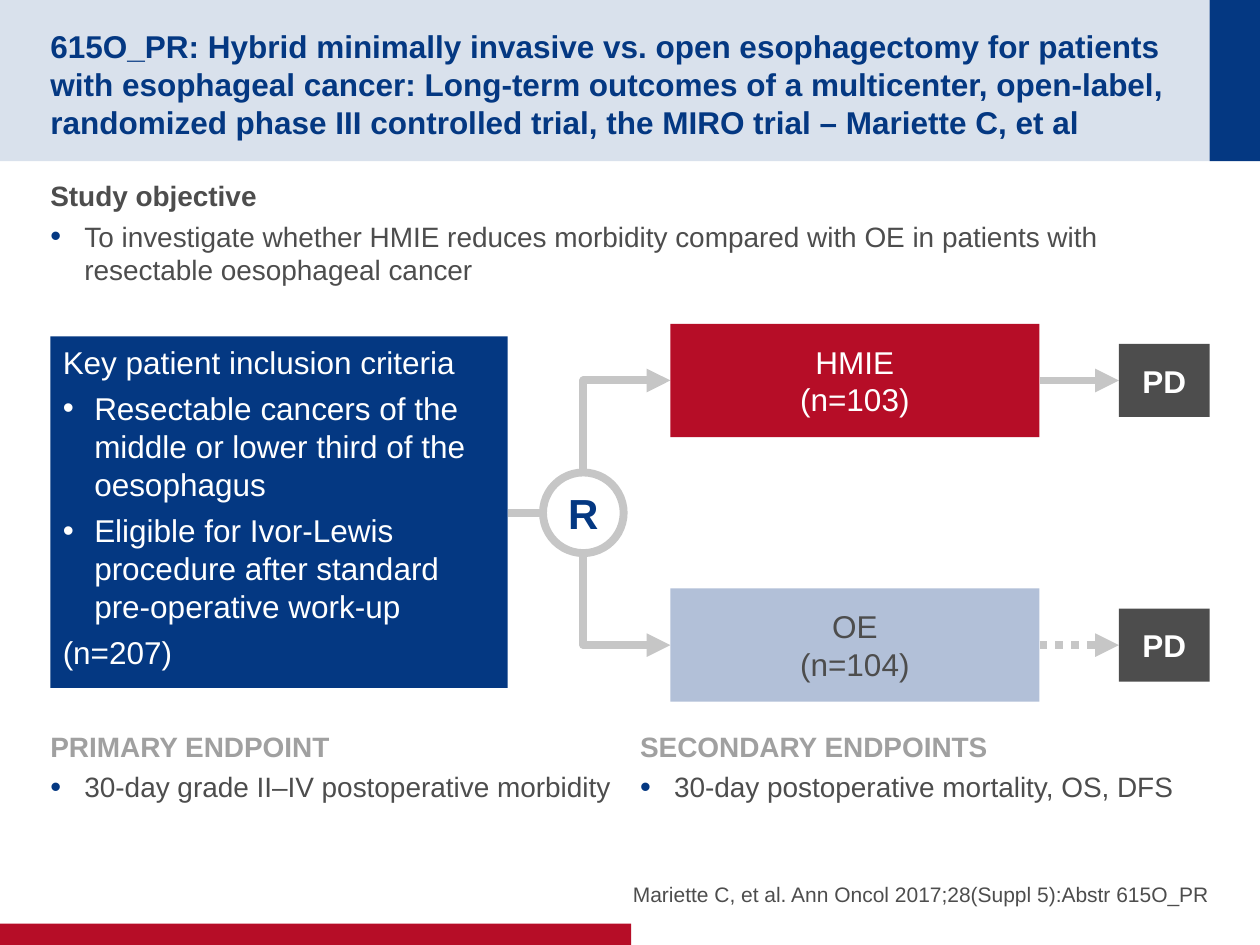
import pptx
import pptx.util
import pptx.dml.color
from lxml import etree
from pptx.enum.dml import MSO_LINE
from pptx.enum.shapes import MSO_CONNECTOR, MSO_SHAPE
from pptx.enum.text import MSO_ANCHOR, MSO_AUTO_SIZE, PP_ALIGN
from pptx.oxml.ns import qn

Inches, Pt = pptx.util.Inches, pptx.util.Pt

# Content
NAVY, RED, PALE, BAND = "043882", "B60D27", "B2C0D8", "D9E1EC"
DARK, GREY, LINE, WHITE = "4D4D4D", "A0A0A0", "C6C6C6", "FFFFFF"
TITLE = ("615O_PR: Hybrid minimally invasive vs. open esophagectomy for patients "
         "with esophageal cancer: Long-term outcomes of a multicenter, open-label, "
         "randomized phase III controlled trial, the MIRO trial – Mariette C, et al")
CITATION = "Mariette C, et al. Ann Oncol 2017;28(Suppl 5):Abstr 615O_PR"
# heading, heading colour, bullet, box
SECTIONS = [
    ("Study objective", DARK,
     "To investigate whether HMIE reduces morbidity compared with OE in patients "
     "with resectable oesophageal cancer", (0.4, 1.37, 9.2, 1.0)),
    ("PRIMARY ENDPOINT", GREY, "30-day grade II–IV postoperative morbidity",
     (0.4, 5.74, 4.52, 0.87)),
    ("SECONDARY ENDPOINTS", GREY, "30-day postoperative mortality, OS, DFS",
     (5.08, 5.74, 4.52, 0.87)),
]
# text, is bullet
CRITERIA = [
    ("Key patient inclusion criteria", False),
    ("Resectable cancers of the middle or lower third of the oesophagus", True),
    ("Eligible for Ivor-Lewis procedure after standard pre-operative work-up", True),
    ("(n=207)", False),
]
# name, size, fill, text colour, centre height, dash to PD
ARMS = [
    ("HMIE", "(n=103)", RED, WHITE, 3.02, None),
    ("OE", "(n=104)", PALE, DARK, 5.12, MSO_LINE.ROUND_DOT),
]
EDGE, RIGHT = 0.4, 9.6
CRIT_W = 3.63
R_X, R_Y, R_D = 4.63, 4.07, 0.64
ARM_X, ARM_W, ARM_H = 5.32, 2.93, 0.9
PD_W, PD_H = 0.72, 0.58


def rgb(value):
    return pptx.dml.color.RGBColor.from_string(value)


def box(s, kind, at, fill=None):
    sp = s.shapes.add_shape(kind, *map(Inches, at))
    sp.shadow.inherit = False
    sp.line.fill.background()
    if fill:
        sp.fill.solid()
        sp.fill.fore_color.rgb = rgb(fill)
    else:
        sp.fill.background()
    return sp


def frame(sp, margins, anchor=MSO_ANCHOR.TOP, wrap=True):
    tf = sp.text_frame
    tf.auto_size = MSO_AUTO_SIZE.NONE
    tf.word_wrap = wrap
    tf.vertical_anchor = anchor
    (tf.margin_left, tf.margin_top,
     tf.margin_right, tf.margin_bottom) = map(Inches, margins)
    return tf


def para(tf, text, size, color, bold=False, align=PP_ALIGN.LEFT, after=0):
    p = tf.paragraphs[0]
    if p.runs:
        p = tf.add_paragraph()
    p.alignment = align
    p.space_before, p.space_after = Pt(0), Pt(after)
    r = p.add_run()
    r.text = text
    r.font.name, r.font.size, r.font.bold = "Arial", Pt(size), bold
    r.font.color.rgb = rgb(color)
    return p


def bullet(p, indent, color, percent=100):
    pPr = p._p.get_or_add_pPr()
    pPr.set("marL", str(Inches(indent)))
    pPr.set("indent", str(-Inches(indent)))
    clr = etree.SubElement(pPr, qn("a:buClr"))
    etree.SubElement(clr, qn("a:srgbClr"), val=color)
    etree.SubElement(pPr, qn("a:buSzPct"), val=str(percent * 1000))
    etree.SubElement(pPr, qn("a:buFont"), typeface="Arial")
    etree.SubElement(pPr, qn("a:buChar"), char="•")


def connect(s, kind, ends, arrow=True, dash=None):
    c = s.shapes.add_connector(kind, *map(Inches, ends))
    c.line.color.rgb = rgb(LINE)
    c.line.width = Pt(4.5)
    if dash:
        c.line.dash_style = dash
    if arrow:
        etree.SubElement(c.line._get_or_add_ln(), qn("a:tailEnd"), type="triangle")
    etree.SubElement(c._element.spPr, qn("a:effectLst"))
    return c


def elbow(s, x1, y1, x2, y2):
    """Vertical leg first, then a horizontal leg to the right."""
    up = y2 < y1
    half_w, half_h = abs(y2 - y1) / 2, (x2 - x1) / 2
    cx, cy = (x1 + x2) / 2, (y1 + y2) / 2
    v = half_h if up else -half_h
    c = connect(s, MSO_CONNECTOR.ELBOW, (cx + half_w, cy + v, cx - half_w, cy - v))
    spPr = c._element.spPr
    spPr.find(qn("a:xfrm")).set("rot", str((90 if up else 270) * 60000))
    spPr.find(qn("a:prstGeom")).set("prst", "bentConnector2")


prs = pptx.Presentation()
prs.slide_width, prs.slide_height = Inches(10), Inches(7.5)
s = prs.slides.add_slide(prs.slide_layouts[5])

# Header and footer bands
for at, fill in [((0, 0, RIGHT, 1.28), BAND), ((RIGHT, 0, 0.4, 1.28), NAVY),
                 ((0, 7.33, 5.01, 0.17), RED)]:
    box(s, MSO_SHAPE.RECTANGLE, at, fill)

# Title, brought in front of the band
title = s.shapes.title
title.left, title.top, title.width, title.height = map(Inches, (EDGE, 0.2, 9.01, 0.88))
para(frame(title, (0, 0.05, 0, 0), MSO_ANCHOR.MIDDLE), TITLE, 18, NAVY, True)
s.shapes._spTree.append(title._element)

# Objective and endpoints
for heading, color, text, at in SECTIONS:
    tf = frame(s.shapes.add_textbox(*map(Inches, at)), (0, 0.05, 0, 0.05))
    para(tf, heading, 16, color, True, after=4)
    bullet(para(tf, text, 16, DARK, after=4), 0.27, NAVY, 110)

# Citation
tf = frame(s.shapes.add_textbox(*map(Inches, (4.63, 6.67, 4.97, 0.53))),
           (0, 0, 0, 0), MSO_ANCHOR.BOTTOM)
para(tf, CITATION, 12, DARK, align=PP_ALIGN.RIGHT, after=4)

# Inclusion criteria
sp = box(s, MSO_SHAPE.RECTANGLE, (EDGE, 2.67, CRIT_W, 2.79), NAVY)
tf = frame(sp, (0.1, 0.05, 0.1, 0.05))
for text, is_bullet in CRITERIA:
    p = para(tf, text, 18, WHITE, after=5)
    if is_bullet:
        bullet(p, 0.25, WHITE)

# Randomisation node
sp = box(s, MSO_SHAPE.OVAL, (R_X - R_D / 2, R_Y - R_D / 2, R_D, R_D))
sp.line.color.rgb = rgb(LINE)
sp.line.width = Pt(4.5)
para(frame(sp, (0.1, 0.05, 0.1, 0.05), MSO_ANCHOR.MIDDLE, False),
     "R", 24, NAVY, True, PP_ALIGN.CENTER)
connect(s, MSO_CONNECTOR.STRAIGHT, (EDGE + CRIT_W, R_Y, R_X - R_D / 2, R_Y), arrow=False)

# Treatment arms
for name, count, fill, color, y, dash in ARMS:
    start = R_Y + (R_D / 2 if y > R_Y else -R_D / 2)
    elbow(s, R_X, start, ARM_X, y)
    connect(s, MSO_CONNECTOR.STRAIGHT, (ARM_X + ARM_W, y, RIGHT - PD_W, y), dash=dash)
    sp = box(s, MSO_SHAPE.RECTANGLE, (ARM_X, y - ARM_H / 2, ARM_W, ARM_H), fill)
    tf = frame(sp, (0.1, 0, 0.1, 0), MSO_ANCHOR.MIDDLE)
    for text in (name, count):
        para(tf, text, 18, color, align=PP_ALIGN.CENTER)
    sp = box(s, MSO_SHAPE.RECTANGLE, (RIGHT - PD_W, y - PD_H / 2, PD_W, PD_H), DARK)
    para(frame(sp, (0.1, 0, 0.1, 0), MSO_ANCHOR.MIDDLE),
         "PD", 18, WHITE, True, PP_ALIGN.CENTER)

prs.save("out.pptx")
